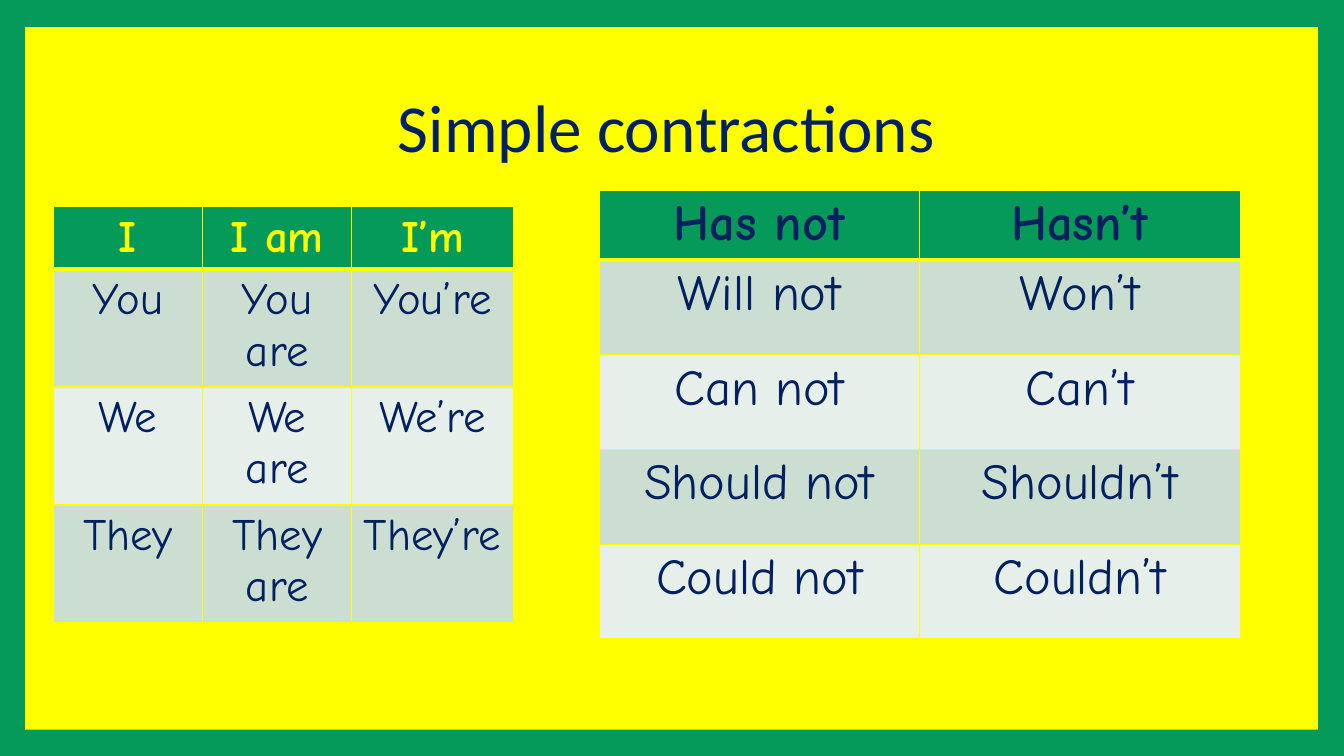
"""Build the slide of simple contractions with its two tables."""
from pptx import Presentation
from pptx.dml.color import RGBColor
from pptx.enum.shapes import MSO_SHAPE as Shape
from pptx.enum.text import MSO_ANCHOR as Anchor, PP_ALIGN as Align
from pptx.oxml import parse_xml
from pptx.oxml.ns import nsdecls
from pptx.util import Inches, Pt

GREEN = RGBColor(0x05, 0x99, 0x5A)
YELLOW = RGBColor(0xFF, 0xFF, 0x00)
NAVY = RGBColor(0x00, 0x20, 0x60)
BANDS = [RGBColor(0xE7, 0xEF, 0xEA), RGBColor(0xCC, 0xDE, 0xD2)]


def style(para, **look):
    para.alignment = Align.CENTER
    para.font.color.rgb = look.pop("color")
    for key, val in look.items():
        setattr(para.font, key, val)


def edge(cell, side, width):
    cell._tc.get_or_add_tcPr().append(parse_xml(
        f'<a:ln{side} {nsdecls("a")} w="{Pt(width)}"><a:solidFill>'
        f'<a:srgbClr val="{YELLOW}"/></a:solidFill></a:ln{side}>'))


deck = Presentation()
deck.slide_width, deck.slide_height = Inches(13.33), Inches(7.5)
slide = deck.slides.add_slide(deck.slide_layouts[5])
slide.background.fill.solid()
slide.background.fill.fore_color.rgb = GREEN

panel = slide.shapes.add_shape(
    Shape.RECTANGLE, Inches(0.25), Inches(0.27), Inches(12.82), Inches(6.97))
panel.shadow.inherit = False
panel.fill.solid()
panel.fill.fore_color.rgb = YELLOW
panel.line.fill.background()
slide.shapes._spTree.insert(2, panel._element)

title = slide.shapes.title
title.left, title.top = Inches(0.75), Inches(0.79)
title.width, title.height = Inches(11.72), Inches(0.91)
title.text_frame.text = "Simple contractions"
title.text_frame.vertical_anchor = Anchor.MIDDLE
style(title.text_frame.paragraphs[0], name="Calibri", size=Pt(48), color=NAVY)

tables = [
    {"left": 0.53, "top": 2.05, "cols": [1.48, 1.48, 1.6], "head": 0.62,
     "body": 1.17, "size": 32, "color": YELLOW,
     "rows": [["I", "I am", "I’m"],
              ["You", "You are", "You’re"],
              ["We", "We are", "We’re"],
              ["They", "They are", "They’re"]]},
    {"left": 5.94, "top": 1.89, "cols": [3.18, 3.18], "head": 0.69,
     "body": 0.94, "size": 36, "color": NAVY,
     "rows": [["Has not", "Hasn’t"],
              ["Will not", "Won’t"],
              ["Can not", "Can’t"],
              ["Should not", "Shouldn’t"],
              ["Could not", "Couldn’t"]]},
]

for data in tables:
    rows, cols = data["rows"], data["cols"]
    high = data["head"] + data["body"] * (len(rows) - 1)
    grid = slide.shapes.add_table(
        len(rows), len(cols), Inches(data["left"]), Inches(data["top"]),
        Inches(sum(cols)), Inches(high)).table
    for col, width in zip(grid.columns, cols):
        col.width = Inches(width)
    for r, words in enumerate(rows):
        first = r == 0
        grid.rows[r].height = Inches(data["head"] if first else data["body"])
        for c, word in enumerate(words):
            cell = grid.cell(r, c)
            widths = {"L": 1, "R": 1, "T": 3 if r == 1 else 1, "B": 3 if first else 1}
            for side, width in widths.items():
                edge(cell, side, width)
            cell.fill.solid()
            cell.fill.fore_color.rgb = GREEN if first else BANDS[r % 2]
            cell.text = word
            style(cell.text_frame.paragraphs[0], name="Comic Neue",
                  size=Pt(data["size"]), bold=first,
                  color=data["color"] if first else NAVY)

deck.save("out.pptx")
